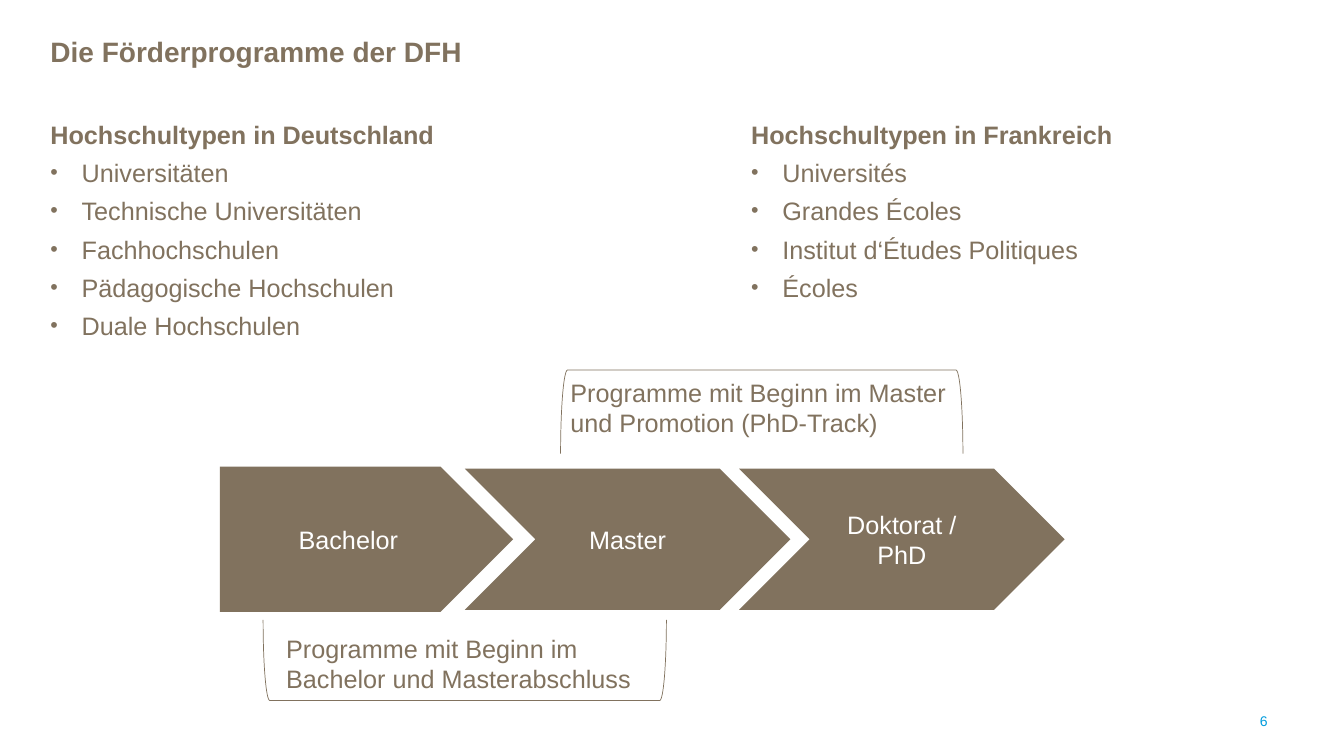
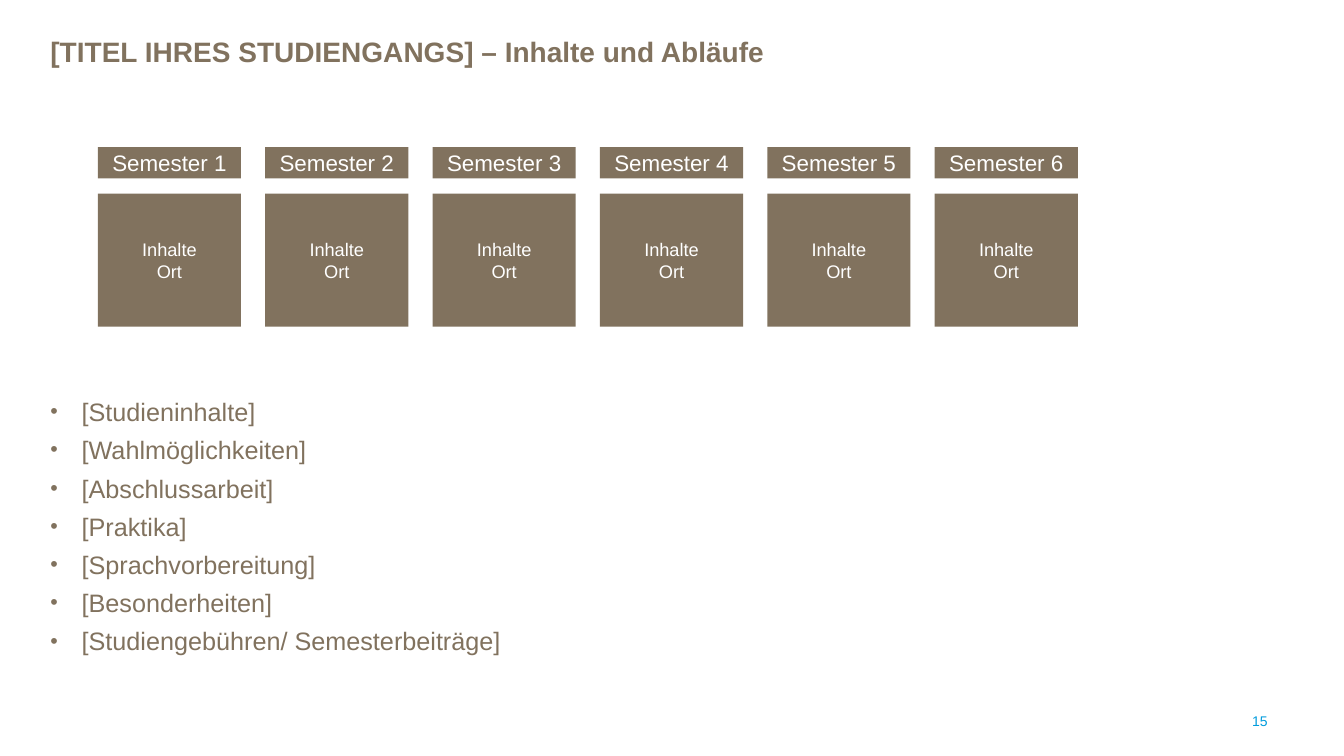
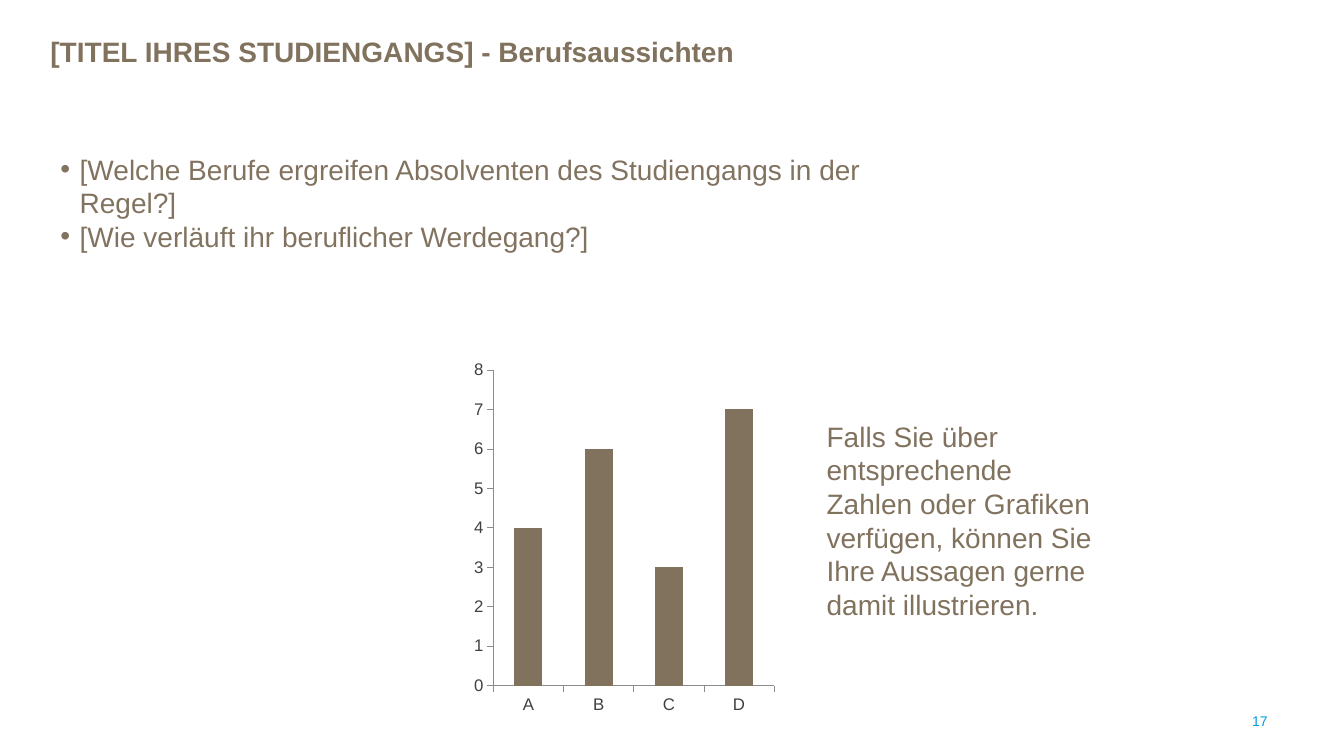
from lxml import etree
from pptx import Presentation
from pptx import util as u
from pptx.chart import data
from pptx.dml import color
from pptx.enum import chart as kinds, shapes, text
from pptx.oxml import ns

PX = 9144
BROWN = color.RGBColor(0x81, 0x72, 0x5E)
TAUPE = color.RGBColor(0x82, 0x73, 0x60)
BLUE = color.RGBColor(0x00, 0x9C, 0xDD)
WHITE = color.RGBColor(0xFF, 0xFF, 0xFF)
DARK = color.RGBColor(0x40, 0x40, 0x40)
GREY = color.RGBColor(0x8B, 0x8B, 0x8B)
FONT = "Arial"
LEFT, MID, RIGHT = text.PP_ALIGN.LEFT, text.PP_ALIGN.CENTER, text.PP_ALIGN.RIGHT
FORM = shapes.MSO_SHAPE


def write(frame, lines, size, tone, side=LEFT):
    frame.word_wrap = True
    frame.text = "\n".join(lines)
    for para in frame.paragraphs:
        para.alignment = side
        for run in para.runs:
            run.font.name = FONT
            run.font.size = u.Pt(size)
            run.font.color.rgb = tone


def block(slide, form, spot, tone):
    shape = slide.shapes.add_shape(form, *[v * PX for v in spot])
    shape.shadow.inherit = False
    shape.fill.solid()
    shape.fill.fore_color.rgb = tone
    shape.line.fill.background()
    return shape


deck = Presentation()
deck.slide_width, deck.slide_height = 1333 * PX, 750 * PX

PAGES = [
    (3, "Die Förderprogramme der DFH", "6"),
    (1, "[TITEL IHRES STUDIENGANGS] – Inhalte und Abläufe", "15"),
    (1, "[TITEL IHRES STUDIENGANGS] - Berufsaussichten", "17"),
]
for layout, name, num in PAGES:
    slide = deck.slides.add_slide(deck.slide_layouts[layout])
    title = slide.shapes.title
    title.left, title.top, title.width, title.height = [v * PX for v in (50, 36, 997, 38)]
    frame = title.text_frame
    write(frame, [name], 20, BROWN)
    frame.auto_size = text.MSO_AUTO_SIZE.NONE
    frame.vertical_anchor = text.MSO_ANCHOR.TOP
    frame.margin_left = frame.margin_right = 0
    frame.paragraphs[0].line_spacing = 0.8
    frame.paragraphs[0].runs[0].font.bold = True
    foot = slide.shapes.add_textbox(*[v * PX for v in (956, 695, 311, 40)])
    write(foot.text_frame, [num], 10, BLUE, RIGHT)
    foot.text_frame.vertical_anchor = text.MSO_ANCHOR.MIDDLE
types, plan, jobs = deck.slides

LISTS = [
    (types, 1, (50, 119, 522, 226), True,
     ["Hochschultypen in Deutschland", "Universitäten", "Technische Universitäten",
      "Fachhochschulen", "Pädagogische Hochschulen", "Duale Hochschulen"]),
    (types, 2, (745, 119, 522, 185), True,
     ["Hochschultypen in Frankreich", "Universités", "Grandes Écoles",
      "Institut d‘Études Politiques", "Écoles"]),
    (plan, 1, (50, 394, 1233, 267), False,
     ["[Studieninhalte]", "[Wahlmöglichkeiten]", "[Abschlussarbeit]", "[Praktika]",
      "[Sprachvorbereitung]", "[Besonderheiten]", "[Studiengebühren/ Semesterbeiträge]"]),
    (jobs, 1, (50, 146, 827, 133), False,
     ["[Welche Berufe ergreifen Absolventen des Studiengangs in der Regel?]",
      "[Wie verläuft ihr beruflicher Werdegang?]"]),
]
for slide, key, spot, head, lines in LISTS:
    loose = slide is not jobs
    size, tone, hang, scale = (18, BROWN, 31, 85) if loose else (20, TAUPE, 19, 100)
    body = slide.placeholders[key]
    body.left, body.top, body.width, body.height = [v * PX for v in spot]
    frame = body.text_frame
    write(frame, lines, size, tone)
    frame.auto_size = text.MSO_AUTO_SIZE.NONE
    if loose:
        frame.margin_left = frame.margin_right = 0
    for i, para in enumerate(frame.paragraphs):
        para.space_before = u.Pt(10 if loose and i else 0)
        para.line_spacing = 0.8 if loose else 1.0
        props = para._p.get_or_add_pPr()
        if head and i == 0:
            para.runs[0].font.bold = True
            props.set("marL", "0")
            props.set("indent", "0")
            etree.SubElement(props, ns.qn("a:buNone"))
            continue
        props.set("marL", str(hang * PX))
        props.set("indent", str(-hang * PX))
        tint = etree.SubElement(props, ns.qn("a:buClr"))
        etree.SubElement(tint, ns.qn("a:srgbClr"), val=str(tone))
        etree.SubElement(props, ns.qn("a:buSzPct"), val=str(scale * 1000))
        etree.SubElement(props, ns.qn("a:buFont"), typeface=FONT)
        etree.SubElement(props, ns.qn("a:buChar"), char="•")

STEPS = [
    (FORM.PENTAGON, (218, 463, 291, 144), "Bachelor"),
    (FORM.CHEVRON, (461, 465, 323, 140), "Master"),
    (FORM.CHEVRON, (733, 465, 323, 140), "Doktorat / PhD"),
]
for form, spot, label in STEPS:
    step = block(types, form, spot, BROWN)
    write(step.text_frame, [label], 18, WHITE, MID)

for spot, turn in [((421, 455, 80, 400), 270), ((714, 209, 83, 399), 90)]:
    brace = block(types, FORM.LEFT_BRACKET, spot, WHITE)
    brace.rotation = turn
    brace.line.color.rgb = BROWN
    brace.line.width = u.Pt(0.5)

NOTES = [
    (types, (274, 623, 400, 70), 18, "Programme mit Beginn im Bachelor und Masterabschluss"),
    (types, (556, 369, 400, 70), 18, "Programme mit Beginn im Master und Promotion (PhD-Track)"),
    (jobs, (810, 411, 291, 210), 20,
     "Falls Sie über entsprechende Zahlen oder Grafiken verfügen, "
     "können Sie Ihre Aussagen gerne damit illustrieren."),
]
for slide, spot, size, label in NOTES:
    note = slide.shapes.add_textbox(*[v * PX for v in spot])
    write(note.text_frame, [label], size, BROWN)

for i in range(6):
    left = 97 + 166 * i
    term = block(plan, FORM.RECTANGLE, (left, 146, 142, 31), BROWN)
    write(term.text_frame, [f"Semester {i + 1}"], 16, WHITE, MID)
    topic = block(plan, FORM.RECTANGLE, (left, 192, 142, 132), BROWN)
    write(topic.text_frame, ["Inhalte", "Ort"], 13, WHITE, MID)

stats = data.CategoryChartData()
stats.categories = ["A", "B", "C", "D"]
stats.add_series("Series 1", [4, 6, 3, 7])
spot = [v * PX for v in (464, 351, 310, 364)]
chart = jobs.shapes.add_chart(kinds.XL_CHART_TYPE.COLUMN_STACKED, *spot, stats).chart
chart.has_legend = chart.has_title = False
chart.font.name = FONT
chart.font.size = u.Pt(10)
plot = chart.plots[0]
plot.gap_width, plot.overlap = 150, 100
plot.vary_by_categories = False
bars = plot.series[0].format.fill
bars.solid()
bars.fore_color.rgb = BROWN
for axis in (chart.category_axis, chart.value_axis):
    axis.has_major_gridlines = False
    axis.major_tick_mark = kinds.XL_TICK_MARK.OUTSIDE
    axis.format.line.color.rgb = GREY
    axis.format.line.width = u.Pt(0.5)
    font = axis.tick_labels.font
    font.name, font.size = FONT, u.Pt(12)
    font.color.rgb = DARK
chart.value_axis.minimum_scale, chart.value_axis.maximum_scale = 0, 8
chart.value_axis.major_unit = 1

deck.save("out.pptx")
